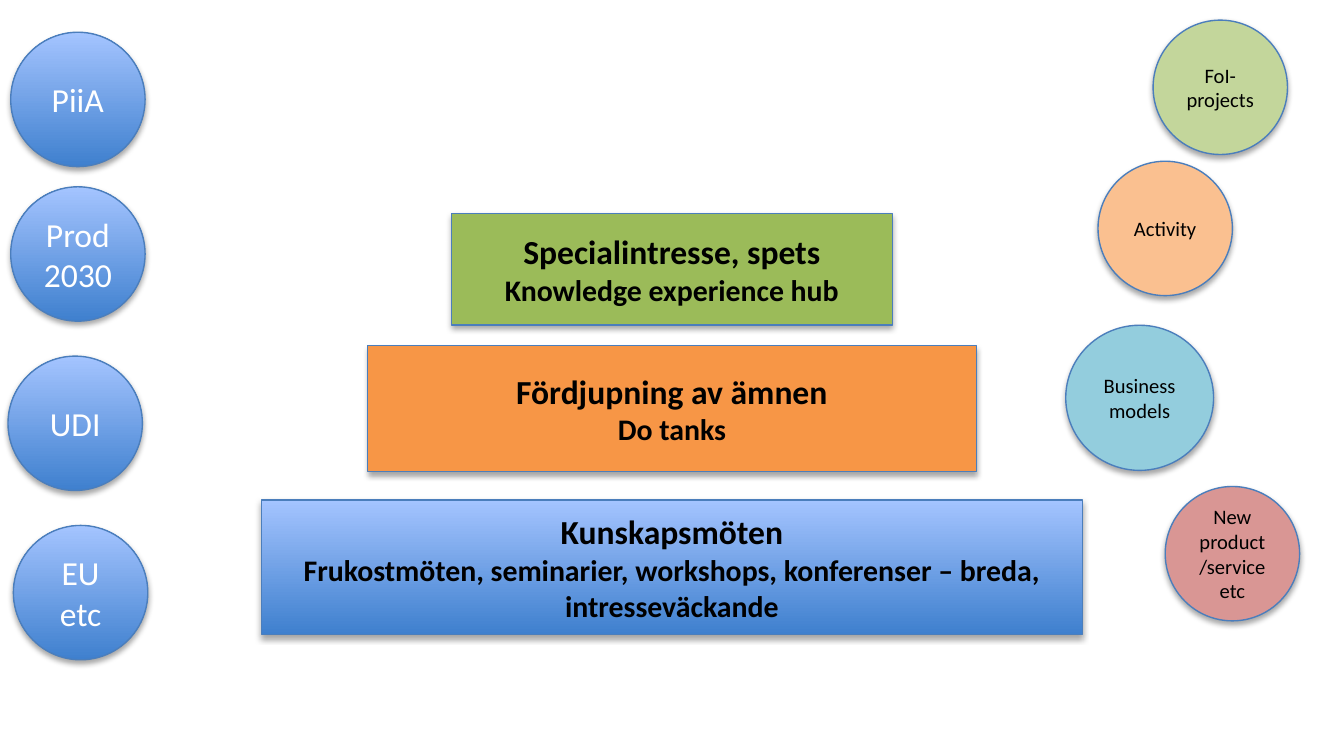
from pptx import Presentation
from pptx.dml.color import RGBColor
from pptx.enum.shapes import MSO_SHAPE as SHAPE
from pptx.enum.text import MSO_ANCHOR as ANCHOR, PP_ALIGN as ALIGN
from pptx.oxml import parse_xml
from pptx.oxml.ns import nsdecls
from pptx.util import Inches, Pt

COLORS = {
    "line": "4B7EBC", "blue_dark": "3F80CE", "blue_light": "A4C4FF",
    "orange": "F79646", "green": "9BBB59",
    "pale_green": "C3D69B", "pale_orange": "FAC090",
    "pale_teal": "93CDDD", "pale_red": "D99694",
    "black": "000000", "white": "FFFFFF",
}
SHADOW = (
    f'<a:effectLst {nsdecls("a")}>'
    f'<a:outerShdw blurRad="{Pt(3.1)}" dist="{Pt(1.8)}" dir="5400000" rotWithShape="0">'
    '<a:srgbClr val="000000"><a:alpha val="35000"/></a:srgbClr>'
    '</a:outerShdw></a:effectLst>'
)


def rgb(name):
    return RGBColor.from_string(COLORS[name])


def add_text(tf, text, size, color="black", bold=False, first=True):
    p = tf.paragraphs[0] if first else tf.add_paragraph()
    p.alignment = ALIGN.CENTER
    r = p.add_run()
    r.text = text
    r.font.name = "Calibri"
    r.font.size = Pt(size)
    r.font.bold = bold
    r.font.color.rgb = rgb(color)


def add_block(slide, kind, box, fill=None):
    """Add an outlined, shadowed shape; without a fill name it gets the blue gradient."""
    sp = slide.shapes.add_shape(kind, *map(Inches, box))
    if fill:
        sp.fill.solid()
        sp.fill.fore_color.rgb = rgb(fill)
    else:
        sp.fill.gradient()
        sp.fill.gradient_angle = 90
        for stop, name in zip(sp.fill.gradient_stops, ("blue_dark", "blue_light")):
            stop.color.rgb = rgb(name)
    sp.line.color.rgb = rgb("line")
    sp.line.width = Pt(0.75)
    sp.shadow.inherit = False
    props = sp.element.spPr
    props.replace(props.find("{*}effectLst"), parse_xml(SHADOW))
    tf = sp.text_frame
    tf.word_wrap = True
    tf.vertical_anchor = ANCHOR.MIDDLE
    return tf


def add_pyramid(slide, center, steps):
    """Stack centred steps, each given as top, width, height, fill, title, detail."""
    for top, width, height, fill, title, detail in steps:
        box = (center - width / 2, top, width, height)
        tf = add_block(slide, SHAPE.RECTANGLE, box, fill)
        add_text(tf, title, 18, bold=True)
        add_text(tf, detail, 16, bold=True, first=False)


def add_circles(slide, left, top, circles, size, color):
    """Place circles, each given as dx, dy, width, height, fill, label."""
    for dx, dy, width, height, fill, label in circles:
        box = (left + dx, top + dy, width, height)
        tf = add_block(slide, SHAPE.OVAL, box, fill)
        add_text(tf, label, size, color)


def main():
    prs = Presentation()
    prs.slide_width = Inches(10)
    prs.slide_height = prs.slide_width * 9 // 16
    slide = prs.slides.add_slide(prs.slide_layouts[6])

    add_pyramid(slide, 5, [
        (3.72, 6.11, 1, None, "Kunskapsmöten",
         "Frukostmöten, seminarier, workshops, konferenser – breda, intresseväckande"),
        (2.57, 4.53, 0.94, "orange", "Fördjupning av ämnen", "Do tanks"),
        (1.59, 3.28, 0.83, "green", "Specialintresse, spets", "Knowledge experience hub"),
    ])
    add_circles(slide, 0.06, 0.24, [
        (0.02, 0, 1, 1, None, "PiiA"),
        (0.02, 1.15, 1, 1, None, "Prod2030"),
        (0, 2.41, 1, 1, None, "UDI"),
        (0.04, 3.67, 1, 1, None, "EU etc"),
    ], size=18, color="white")
    add_circles(slide, 7.93, 0.15, [
        (0.65, 0, 1, 1, "pale_green", "FoI-projects"),
        (0.24, 1.05, 1, 1, "pale_orange", "Activity"),
        (0, 2.27, 1.1, 1.08, "pale_teal", "Business models"),
        (0.74, 3.47, 1, 1, "pale_red", "New product/service etc"),
    ], size=11, color="black")
    prs.save("out.pptx")


if __name__ == "__main__":
    main()
